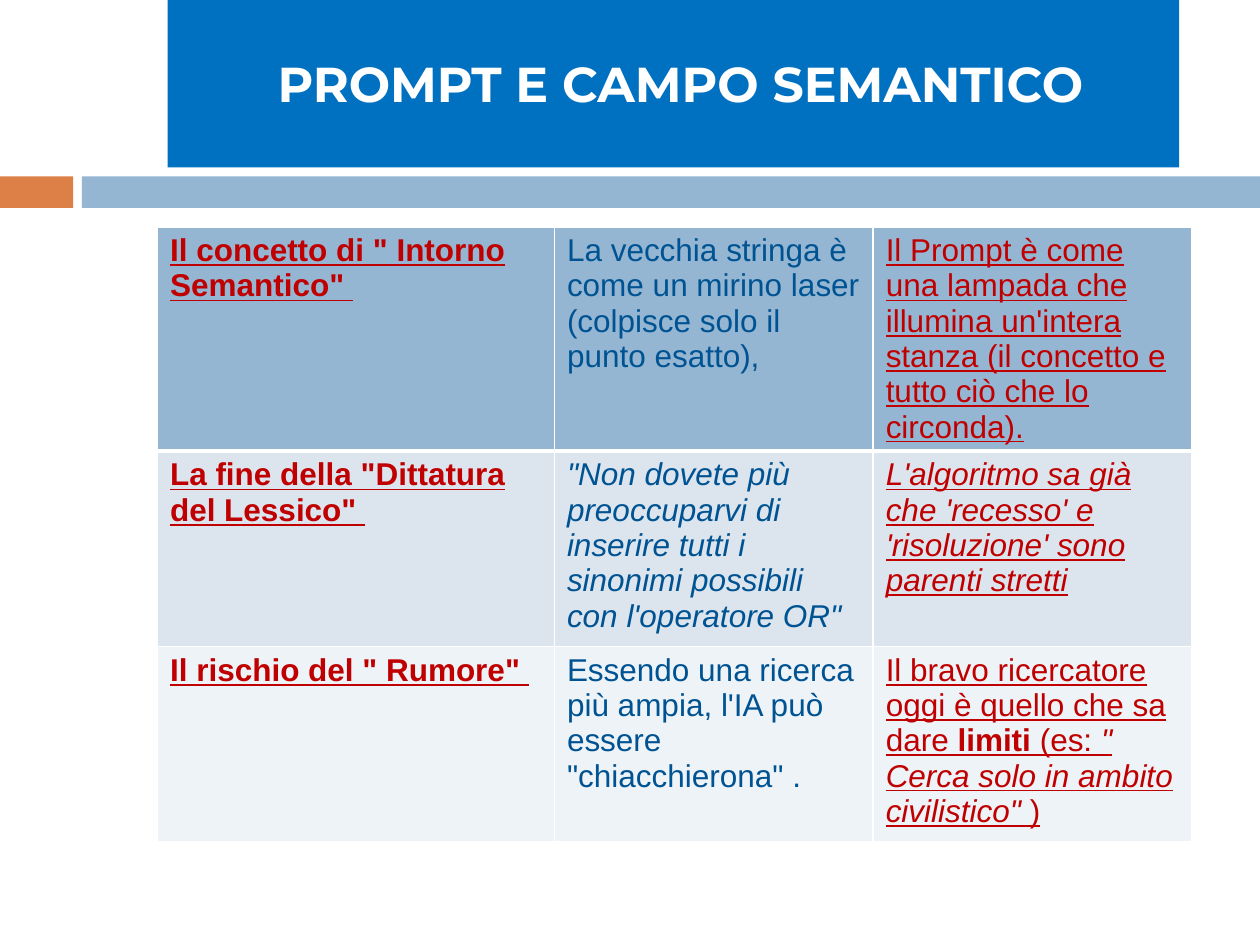
import pptx
import pptx.util
import pptx.dml.color
import pptx.enum.shapes
import pptx.enum.text
import pptx.oxml
import pptx.oxml.ns

Inches = pptx.util.Inches
Pt = pptx.util.Pt
COLORS = {
    "orange": "DD8047", "band": "94B6D2", "title": "0070C0", "white": "FFFFFF",
    "red": "C00000", "blue": "005392", "row": "DCE5EE", "pale row": "EEF3F7",
}


def color(name):
    return pptx.dml.color.RGBColor.from_string(COLORS[name])


def add_bar(left, top, width, height, fill):
    bar = page.shapes.add_shape(
        pptx.enum.shapes.MSO_SHAPE.RECTANGLE,
        Inches(left), Inches(top), Inches(width), Inches(height))
    bar.shadow.inherit = False
    bar.fill.solid()
    bar.fill.fore_color.rgb = color(fill)
    bar.line.fill.background()
    return bar


deck = pptx.Presentation()
deck.slide_width = Inches(10)
deck.slide_height = Inches(7.5)
page = deck.slides.add_slide(deck.slide_layouts[6])

add_bar(0, 1.4, 0.58, 0.25, "orange")
add_bar(0.65, 1.4, 9.35, 0.25, "band")

title = add_bar(1.33, 0, 8.03, 1.33, "title").text_frame
title.word_wrap = True
title.vertical_anchor = pptx.enum.text.MSO_ANCHOR.MIDDLE
title.margin_top = Inches(0.04)
title.margin_bottom = Inches(0.05)
para = title.paragraphs[0]
para.text = " PROMPT E CAMPO SEMANTICO"
para.alignment = pptx.enum.text.PP_ALIGN.CENTER
para.font.name = "Montserrat"
para.font.size = Pt(28)
para.font.bold = True
para.font.color.rgb = color("white")

ROWS = [
    ("band", 1.19, [
        [("Il concetto di \" Intorno Semantico\" ", "b")],
        [("La vecchia stringa è come un mirino laser (colpisce solo il punto esatto),", "")],
        [("Il Prompt è come una lampada che illumina un'intera stanza "
          "(il concetto e tutto ciò che lo circonda).", "")],
    ]),
    ("row", 1.55, [
        [("La fine della \"Dittatura del Lessico\" ", "b")],
        [("\"Non dovete più preoccuparvi di inserire tutti i sinonimi possibili "
          "con l'operatore OR\"", "i")],
        [("L'algoritmo sa già che 'recesso' e 'risoluzione' sono parenti stretti", "i")],
    ]),
    ("pale row", 1.55, [
        [("Il rischio del \" Rumore\" ", "b")],
        [("Essendo una ricerca più ampia, l'IA può essere \"chiacchierona\" .", "")],
        [("Il bravo ricercatore oggi è quello che sa dare ", ""), ("limiti", "b"),
         (" (es: ", ""), ("\" Cerca solo in ambito civilistico\" ", "i"), (")", "")],
    ]),
]
TEXT_COLORS = ["red", "blue", "red"]

table = page.shapes.add_table(
    3, 3, Inches(1.25), Inches(1.8), Inches(8.2), Inches(4.29)).table
for column, width in zip(table.columns, [3.15, 2.53, 2.53]):
    column.width = Inches(width)

for row_index, (fill, height, texts) in enumerate(ROWS):
    table.rows[row_index].height = Inches(height)
    for column_index, (spans, text_color) in enumerate(zip(texts, TEXT_COLORS)):
        cell = table.cell(row_index, column_index)
        properties = cell._tc.get_or_add_tcPr()
        for side in "LRTB":
            heavy = (row_index, side) in [(0, "B"), (1, "T")]
            properties.append(pptx.oxml.parse_xml(
                f'<a:ln{side} {pptx.oxml.ns.nsdecls("a")} w="{Pt(3 if heavy else 1)}">'
                f'<a:solidFill><a:srgbClr val="{COLORS["white"]}"/></a:solidFill>'
                f'</a:ln{side}>'))
        cell.fill.solid()
        cell.fill.fore_color.rgb = color(fill)
        para = cell.text_frame.paragraphs[0]
        for text, style in spans:
            span = para.add_run()
            span.text = text
            span.font.name = "Arial"
            span.font.size = Pt(18)
            span.font.bold = style == "b"
            span.font.italic = style == "i"
            span.font.underline = text_color == "red"
            span.font.color.rgb = color(text_color)

deck.save("out.pptx")
